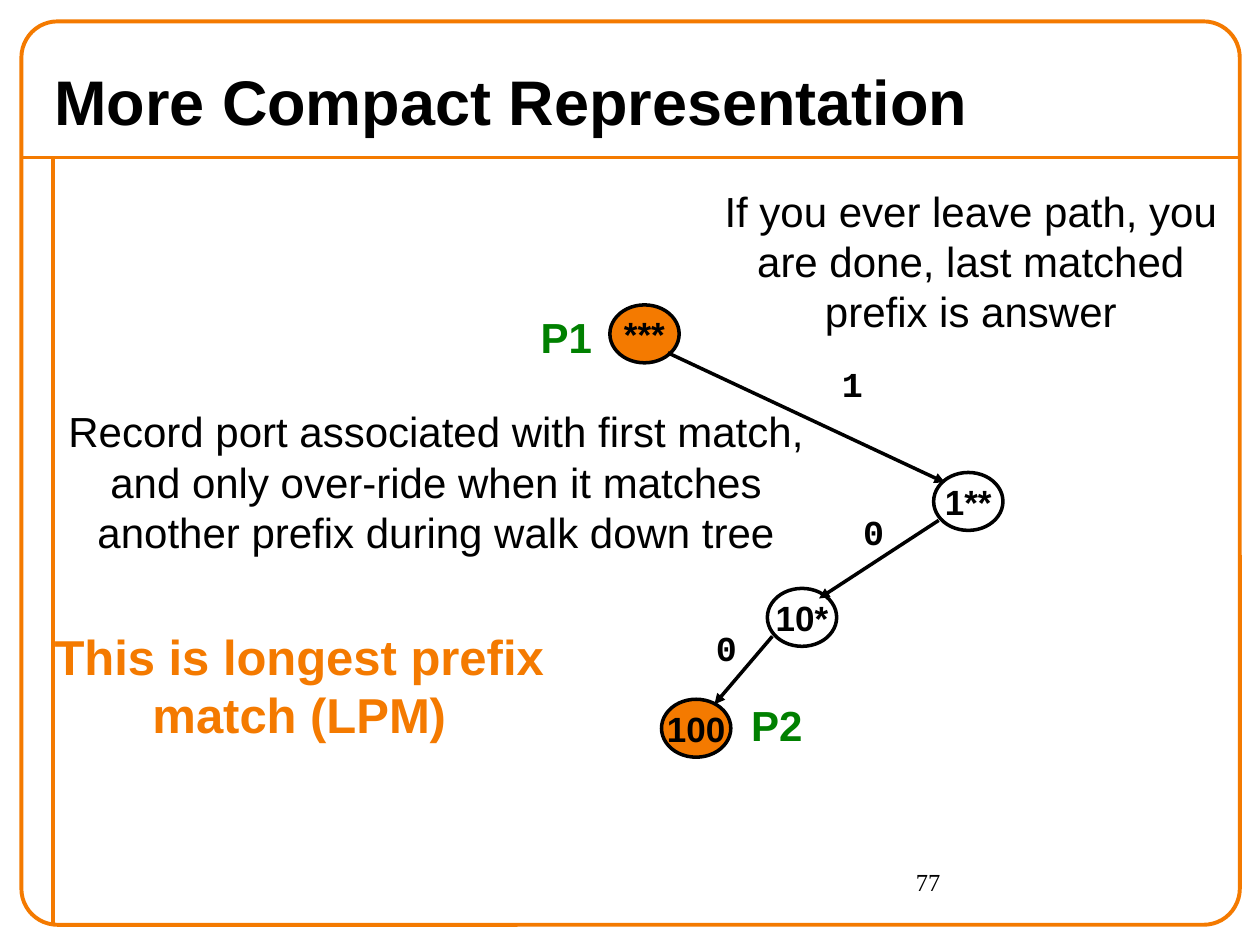
from lxml import etree
from pptx import Presentation
from pptx import util as u
from pptx.dml.color import RGBColor
from pptx.enum import shapes as sh, text as tx
from pptx.oxml import ns

ORANGE = RGBColor(0xF4, 0x7A, 0x00)
GREEN = RGBColor(0x00, 0x80, 0x00)
BLACK = RGBColor(0, 0, 0)
WHITE = RGBColor(0xFF, 0xFF, 0xFF)
MID = tx.PP_ALIGN.CENTER
LEFT = tx.PP_ALIGN.LEFT
NODE = (0.55, 0.46)
BODY = {"size": u.Pt(24), "name": "Arial", "bold": False}
PORT = {"size": u.Pt(24), "name": "Arial", "bold": True}
KEY = {"size": u.Pt(20), "name": "Arial", "bold": True}
BIT = {"size": u.Pt(20), "name": "Courier New", "bold": True}
CLAIM = {"size": u.Pt(28), "name": "Arial", "bold": True}
HEAD = {"size": u.Pt(36), "name": "Arial", "bold": True}
PAGE = {"size": u.Pt(14), "name": "Times New Roman", "bold": False}


def write(shape, words, form, color=BLACK, align=MID,
          anchor=tx.MSO_ANCHOR.TOP, wrap=True):
    """Fill a shape with one formatted paragraph."""
    frame = shape.text_frame
    frame.word_wrap = wrap
    frame.vertical_anchor = anchor
    para = frame.paragraphs[0]
    para.alignment = align
    run = para.add_run()
    run.text = words
    for key, value in form.items():
        setattr(run.font, key, value)
    run.font.color.rgb = color


def label(slide, box, words, form, color=BLACK, align=MID):
    """Add a text box."""
    shape = slide.shapes.add_textbox(*map(u.Inches, box))
    write(shape, words, form, color, align)


def line(slide, start, end, color, width, arrow=False):
    """Add a straight line, with an arrowhead at its end if asked."""
    link = slide.shapes.add_connector(
        sh.MSO_CONNECTOR.STRAIGHT, *map(u.Inches, (*start, *end)))
    link.line.color.rgb = color
    link.line.width = u.Pt(width)
    if arrow:
        etree.SubElement(link.line._get_or_add_ln(), ns.qn("a:tailEnd"),
                         type="triangle")
    etree.SubElement(link._element.spPr, ns.qn("a:effectLst"))


def border(slide, box):
    """Draw the rounded border with its title rule and side rule."""
    x, y, w, h = box
    rule = y + 1.08
    side = x + 0.25
    line(slide, (x, rule), (x + w, rule), ORANGE, 2.25)
    line(slide, (side, rule), (side, y + h), ORANGE, 2.25)
    edge = slide.shapes.add_shape(
        sh.MSO_SHAPE.ROUNDED_RECTANGLE, *map(u.Inches, box))
    edge.adjustments[0] = 0.04
    edge.shadow.inherit = False
    edge.fill.background()
    edge.line.color.rgb = ORANGE
    edge.line.width = u.Pt(2.25)


def header(slide, box):
    """Place the title."""
    title = slide.shapes.title
    for key, value in zip(("left", "top", "width", "height"), box):
        setattr(title, key, u.Inches(value))
    write(title, "More Compact Representation", HEAD, align=LEFT,
          anchor=tx.MSO_ANCHOR.MIDDLE)


def node(slide, spot, words, fill):
    """Draw one trie node."""
    oval = slide.shapes.add_shape(
        sh.MSO_SHAPE.OVAL, *map(u.Inches, (*spot, *NODE)))
    oval.shadow.inherit = False
    oval.fill.solid()
    oval.fill.fore_color.rgb = fill
    oval.line.color.rgb = BLACK
    oval.line.width = u.Pt(2)
    write(oval, words, KEY, anchor=tx.MSO_ANCHOR.MIDDLE, wrap=False)


def trie(slide, box):
    """Draw the prefix trie with its edges, bits and ports."""
    x, y = box[:2]
    nodes = (("***", 0.76, 0, ORANGE), ("1**", 3.33, 1.33, WHITE),
             ("10*", 2.01, 2.25, WHITE), ("100", 1.17, 3.13, ORANGE))
    edges = (("1", (1.22, 0.38), (3.42, 1.41), (2.42, 0.41)),
             ("0", (3.37, 1.71), (2.42, 2.33), (2.59, 1.58)),
             ("0", (2.05, 2.63), (1.59, 3.17), (1.42, 2.5)))
    ports = (("P1", 0, 0), ("P2", 1.67, 3.08))
    for words, dx, dy, fill in nodes:
        node(slide, (x + dx, y + dy), words, fill)
    for bit, start, end, spot in edges:
        line(slide, (x + start[0], y + start[1]), (x + end[0], y + end[1]),
             BLACK, 2, True)
        label(slide, (x + spot[0], y + spot[1], 0.53, 0.43), bit, BIT)
    for port, dx, dy in ports:
        label(slide, (x + dx, y + dy, 0.83, 0.5), port, PORT, GREEN)


def notes(slide, box):
    """Place the remarks around the trie."""
    x, y = box[:2]
    rows = (
        ("Record port associated with first match, and only over-ride when "
         "it matches another prefix during walk down tree",
         (0.17, 1.75, 6.08, 1.31), BODY, BLACK),
        ("This is longest prefix match (LPM)",
         (0, 3.5, 4.25, 1.04), CLAIM, ORANGE),
        ("If you ever leave path, you are done, last matched prefix is answer",
         (5.33, 0, 4.25, 1.31), BODY, BLACK))
    for words, (dx, dy, w, h), form, color in rows:
        label(slide, (x + dx, y + dy, w, h), words, form, color)


def main():
    """Build and save the slide."""
    deck = Presentation()
    deck.slide_width, deck.slide_height = u.Inches(10), u.Inches(7.5)
    slide = deck.slides.add_slide(deck.slide_layouts[5])
    border(slide, (0.17, 0.17, 9.67, 7.17))
    label(slide, (7.17, 6.83, 2.33, 0.5), "77", PAGE, align=LEFT)
    header(slide, (0.33, 0.42, 9.42, 0.75))
    trie(slide, (4.08, 2.42, 3.88, 3.59))
    notes(slide, (0.25, 1.42, 9.58, 4.54))
    deck.save("out.pptx")


if __name__ == "__main__":
    main()
